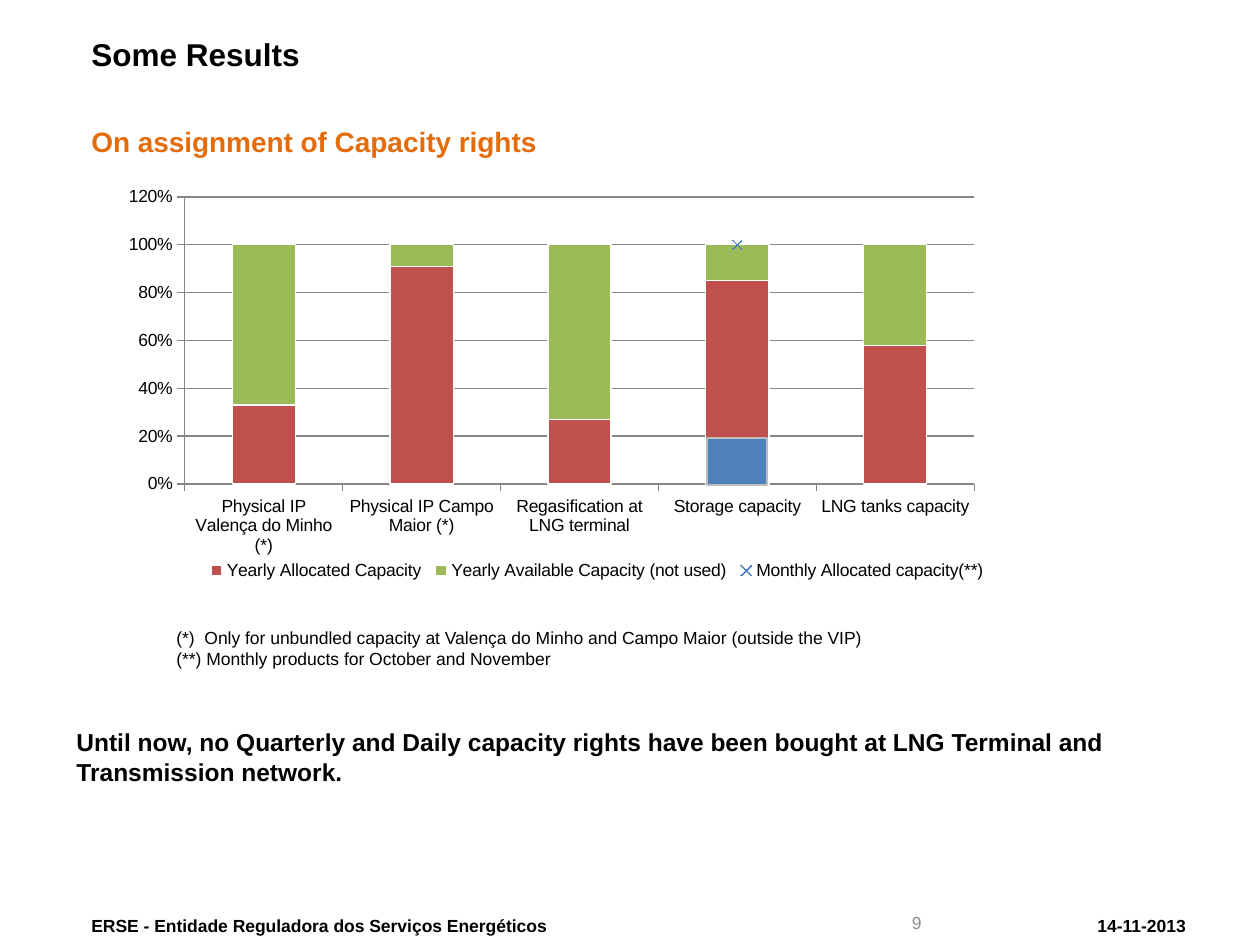
from lxml import etree
from pptx import Presentation
from pptx.chart.data import CategoryChartData
from pptx.dml.color import RGBColor
from pptx.enum.chart import XL_CHART_TYPE, XL_LEGEND_POSITION, XL_TICK_MARK
from pptx.enum.shapes import MSO_SHAPE
from pptx.enum.text import MSO_ANCHOR, PP_ALIGN
from pptx.oxml import parse_xml
from pptx.oxml.ns import nsdecls, qn
from pptx.util import Emu, Pt

STACKED = XL_CHART_TYPE.COLUMN_STACKED_100
BOTTOM = XL_LEGEND_POSITION.BOTTOM
OUTSIDE = XL_TICK_MARK.OUTSIDE
RECTANGLE = MSO_SHAPE.RECTANGLE
TOP, MIDDLE = MSO_ANCHOR.TOP, MSO_ANCHOR.MIDDLE
LEFT, RIGHT = PP_ALIGN.LEFT, PP_ALIGN.RIGHT

PIXELS_PER_INCH = 126
FONT = "Arial"
COLORS = {
    "text": "000000",
    "heading": "E46C0A",
    "page": "8C8C8C",
    "allocated": "C0504D",
    "available": "9BBB59",
    "monthly": "4F81BD",
    "axis": "868686",
    "border": "BDBDBD",
    "white": "FFFFFF",
}
CATEGORIES = [
    "Physical IP Valença do Minho (*)",
    "Physical IP Campo Maior (*)",
    "Regasification at LNG terminal",
    "Storage capacity",
    "LNG tanks capacity",
]
SERIES = [
    ("Yearly Allocated Capacity", (33, 91, 27, 85, 58)),
    ("Yearly Available Capacity (not used)", (67, 9, 73, 15, 42)),
    ("Monthly Allocated capacity(**)", (None, None, None, 0.15, None)),
]


def px(value):
    return Emu(round(value * 914400 / PIXELS_PER_INCH))


def color(name):
    return RGBColor.from_string(COLORS[name])


def place(box):
    return [px(value) for value in box]


def write_text(shape, lines, size, name="text", bold=False, align=LEFT, anchor=TOP):
    frame = shape.text_frame
    frame.word_wrap = True
    frame.vertical_anchor = anchor
    for index, line in enumerate(lines):
        paragraph = frame.add_paragraph() if index else frame.paragraphs[0]
        paragraph.alignment = align
        run = paragraph.add_run()
        run.text = line
        run.font.name = FONT
        run.font.size = Pt(size)
        run.font.bold = bold
        run.font.color.rgb = color(name)


def add_text(slide, box, lines, size, **style):
    write_text(slide.shapes.add_textbox(*place(box)), lines, size, **style)


def add_rectangle(slide, box, fill, line=None):
    shape = slide.shapes.add_shape(RECTANGLE, *place(box))
    shape.shadow.inherit = False
    shape.fill.solid()
    shape.fill.fore_color.rgb = color(fill)
    if line:
        shape.line.color.rgb = color(line)
        shape.line.width = Pt(0.75)
    else:
        shape.line.fill.background()
    return shape


def manual_layout(x, y, width, height, inner=False):
    target = '<c:layoutTarget val="inner"/>' if inner else ""
    return parse_xml(
        f'<c:layout {nsdecls("c")}><c:manualLayout>{target}'
        '<c:xMode val="edge"/><c:yMode val="edge"/>'
        f'<c:x val="{x}"/><c:y val="{y}"/><c:w val="{width}"/><c:h val="{height}"/>'
        "</c:manualLayout></c:layout>"
    )


def hidden_axis(tag, number, crossing, position, limits=""):
    return parse_xml(
        f'<c:{tag} {nsdecls("c")}><c:axId val="{number}"/>'
        f'<c:scaling><c:orientation val="minMax"/>{limits}</c:scaling>'
        f'<c:delete val="1"/><c:axPos val="{position}"/>'
        f'<c:crossAx val="{crossing}"/><c:crosses val="max"/></c:{tag}>'
    )


def move_last_series_to_markers(plot_area):
    bars = plot_area.find(qn("c:barChart"))
    series = bars.findall(qn("c:ser"))[-1]
    bars.remove(series)
    for tag in ("c:invertIfNegative", "c:spPr"):
        for element in series.findall(qn(tag)):
            series.remove(element)
    title = series.find(qn("c:tx"))
    title.addnext(parse_xml(
        f'<c:marker {nsdecls("c", "a")}><c:symbol val="x"/><c:size val="5"/>'
        '<c:spPr><a:noFill/><a:ln w="9525"><a:solidFill>'
        f'<a:srgbClr val="{COLORS["monthly"]}"/>'
        "</a:solidFill></a:ln></c:spPr></c:marker>"
    ))
    title.addnext(parse_xml(
        f'<c:spPr {nsdecls("c", "a")}><a:ln w="28575"><a:noFill/></a:ln></c:spPr>'
    ))
    etree.SubElement(series, qn("c:smooth")).set("val", "0")
    lines = parse_xml(
        f'<c:lineChart {nsdecls("c")}><c:grouping val="standard"/>'
        '<c:varyColors val="0"/><c:marker val="1"/>'
        '<c:axId val="5001"/><c:axId val="5002"/></c:lineChart>'
    )
    lines.insert(2, series)
    bars.addnext(lines)
    primary = plot_area.find(qn("c:valAx"))
    primary.addnext(hidden_axis("catAx", 5001, 5002, "b"))
    primary.addnext(hidden_axis("valAx", 5002, 5001, "r",
                                '<c:max val="1.2"/><c:min val="0"/>'))


def style_axis(axis):
    axis.major_tick_mark = OUTSIDE
    axis.format.line.color.rgb = color("axis")
    axis.format.line.width = Pt(0.75)


def add_capacity_chart(slide, box):
    left, top, width, height = box
    data = CategoryChartData()
    data.categories = CATEGORIES
    for name, values in SERIES:
        data.add_series(name, values)
    chart = slide.shapes.add_chart(STACKED, *place(box), data).chart
    chart.has_title = False
    chart.font.name = FONT
    chart.font.size = Pt(10)
    chart.font.color.rgb = color("text")
    plot = chart.plots[0]
    plot.gap_width = 150
    plot.overlap = 100
    plot.vary_by_categories = False
    for series, name in zip(plot.series, ("allocated", "available")):
        series.format.fill.solid()
        series.format.fill.fore_color.rgb = color(name)
        series.format.line.color.rgb = color("white")
        series.format.line.width = Pt(0.75)
    value_axis = chart.value_axis
    value_axis.minimum_scale, value_axis.maximum_scale = 0, 1.2
    value_axis.major_unit = 0.2
    value_axis.tick_labels.number_format = "0%"
    value_axis.tick_labels.number_format_is_linked = False
    gridlines = value_axis.major_gridlines.format.line
    gridlines.color.rgb = color("axis")
    gridlines.width = Pt(0.75)
    style_axis(value_axis)
    style_axis(chart.category_axis)
    chart.has_legend = True
    chart.legend.position = BOTTOM
    chart.legend.include_in_layout = False
    legend = chart.legend._element
    legend.find(qn("c:legendPos")).addnext(manual_layout(0.11, 0.9, 0.89, 0.07))
    plot_area = plot._element.getparent()
    for layout in plot_area.findall(qn("c:layout")):
        plot_area.remove(layout)
    plot_area.insert(0, manual_layout(0.09, 0.05, 0.89, 0.68, inner=True))
    move_last_series_to_markers(plot_area)
    add_rectangle(slide, (left + 602, top + 262, 60, 47), "monthly", "border")


def add_header(slide, box):
    left, top, width, height = box
    add_text(slide, (left, top, 873, 79), ["Some Results"], 18, bold=True)
    add_text(slide, (left, top + 89, width, 39), ["On assignment of Capacity rights"],
             16, name="heading", bold=True)


def add_notes_and_conclusion(slide, box):
    left, top, width, height = box
    add_text(slide, (left + 100, top, 794, 55), [
        "(*)  Only for unbundled capacity at Valença do Minho and Campo Maior (outside the VIP)",
        "(**) Monthly products for October and November",
    ], 10)
    conclusion = add_rectangle(slide, (left, top + 100, width, 72), "white")
    write_text(conclusion, [
        "Until now, no Quarterly and Daily capacity rights have been bought at "
        "LNG Terminal and Transmission network."
    ], 14, bold=True)


def add_footer(slide, box):
    left, top, width, height = box
    add_text(slide, (left + width - 120, top, 120, height), ["14-11-2013"], 10,
             bold=True, align=RIGHT, anchor=MIDDLE)
    add_text(slide, (left, top, 481, height),
             ["ERSE - Entidade Reguladora dos Serviços Energéticos"], 10,
             bold=True, anchor=MIDDLE)
    add_text(slide, (left + 748, top - 3, 107, height), ["9"], 10,
             name="page", align=RIGHT, anchor=MIDDLE)


def main():
    presentation = Presentation()
    presentation.slide_width, presentation.slide_height = px(1260), px(945)
    slide = presentation.slides.add_slide(presentation.slide_layouts[6])
    add_header(slide, (79, 29, 1113, 128))
    add_footer(slide, (79, 913, 1119, 25))
    add_notes_and_conclusion(slide, (64, 621, 1062, 172))
    add_capacity_chart(slide, (105, 176, 887, 422))
    presentation.save("out.pptx")


if __name__ == "__main__":
    main()
